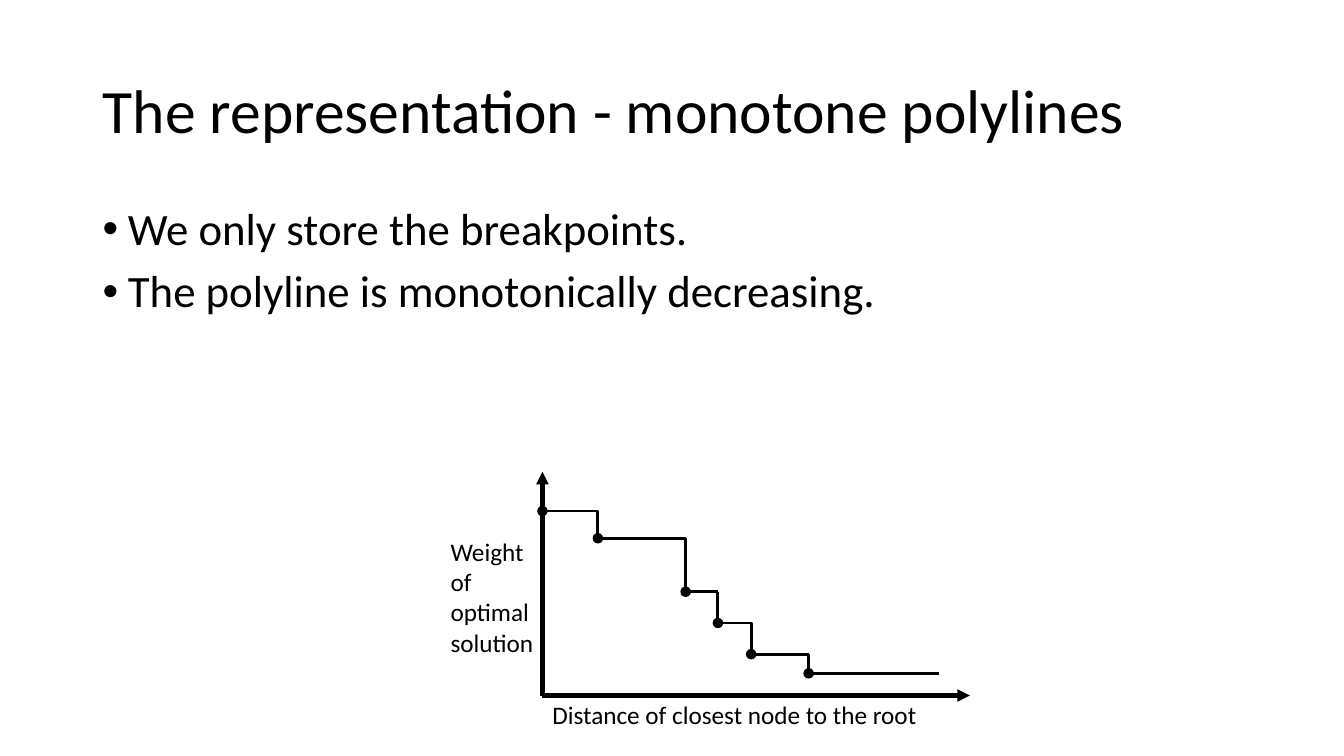
from lxml import etree
from pptx import Presentation
from pptx.dml.color import RGBColor
from pptx.enum.shapes import MSO_CONNECTOR as CONN, MSO_SHAPE as SHAPE
from pptx.enum.text import MSO_ANCHOR as ANCHOR, MSO_AUTO_SIZE as FIT, PP_ALIGN as ALIGN
from pptx.oxml.ns import qn
from pptx.util import Inches, Pt

COLORS = {"ink": "000000"}
FONT = "Calibri"
TITLE = "The representation - monotone polylines"
BULLETS = ["We only store the breakpoints.", "The polyline is monotonically decreasing."]
AXIS_LABELS = [
    ("Weight of optimal solution", (4.37, 5.27, 1.16, 1.31)),
    ("Distance of closest node to the root", (5.38, 6.89, 3.94, 0.4)),
]
ORIGIN = (5.38, 6.9)
AXIS_ENDS = [(5.38, 4.68), (9.62, 6.9)]
BREAKPOINTS = [(5.38, 5.07), (5.93, 5.34), (6.8, 5.87), (7.12, 6.18), (7.45, 6.49), (8.02, 6.68)]
STEPS = [
    ((5.38, 5.07), (6.47, 5.34), False),
    ((6.47, 5.34), (7.12, 5.87), False),
    ((7.12, 5.87), (7.45, 6.49), True),
    ((7.45, 6.49), (8.59, 6.68), False),
]
TAIL = ((8.59, 6.68), (9.31, 6.68))
DOT = 0.09

prs = Presentation()
prs.slide_width, prs.slide_height = Inches(13.33), Inches(7.5)
slide = prs.slides.add_slide(prs.slide_layouts[5])
shapes = slide.shapes


def ink():
    return RGBColor.from_string(COLORS["ink"])


def put_text(sp, lines, size, anchor=ANCHOR.TOP, fit=FIT.NONE, spacing=None, before=0, bullet=None):
    tf = sp.text_frame
    tf.word_wrap, tf.auto_size, tf.vertical_anchor = True, fit, anchor
    for i, line in enumerate(lines):
        p = tf.add_paragraph() if i else tf.paragraphs[0]
        p.alignment, p.line_spacing, p.space_before = ALIGN.LEFT, spacing, Pt(before)
        r = p.add_run()
        r.text = line
        r.font.name, r.font.size = FONT, Pt(size)
        r.font.color.rgb = ink()
        if bullet:
            pPr = p._p.get_or_add_pPr()
            pPr.set("marL", str(Inches(0.25)))
            pPr.set("indent", str(-Inches(0.25)))
            etree.SubElement(pPr, qn("a:buFont")).set("typeface", "Arial")
            etree.SubElement(pPr, qn("a:buChar")).set("char", bullet)


def connect(start, end, width, kind=CONN.STRAIGHT, arrow=False):
    c = shapes.add_connector(kind, *map(Inches, start + end))
    c.line.color.rgb = ink()
    c.line.width = Pt(width)
    if arrow:
        etree.SubElement(c.line._get_or_add_ln(), qn("a:tailEnd")).set("type", "triangle")
    etree.SubElement(c._element.spPr, qn("a:effectLst"))
    return c


def add_step(start, end, vertical_first):
    if not vertical_first:
        connect(start, end, 2, CONN.ELBOW)
        return
    (x1, y1), (x2, y2) = start, end
    cx, cy = (x1 + x2) / 2, (y1 + y2) / 2
    half_w, half_h = (y2 - y1) / 2, (x2 - x1) / 2
    c = connect((cx + half_w, cy - half_h), (cx - half_w, cy + half_h), 2, CONN.ELBOW)
    c._element.spPr.find(qn("a:xfrm")).set("rot", str(270 * 60000))


title = shapes.title
title.left, title.top, title.width, title.height = map(Inches, (0.92, 0.4, 11.5, 1.45))
put_text(title, [TITLE], 44, anchor=ANCHOR.MIDDLE, spacing=0.9)

body = shapes.add_textbox(*map(Inches, (0.92, 2, 11.11, 4.59)))
put_text(body, BULLETS, 32, spacing=0.9, before=10, bullet="•")

for axis_end in AXIS_ENDS:
    connect(ORIGIN, axis_end, 3, arrow=True)
for label, box in AXIS_LABELS:
    put_text(shapes.add_textbox(*map(Inches, box)), [label], 18, fit=FIT.SHAPE_TO_FIT_TEXT)

for step in STEPS:
    add_step(*step)
connect(*TAIL, 2)

for x, y in BREAKPOINTS:
    dot = shapes.add_shape(SHAPE.OVAL, *map(Inches, (x - DOT / 2, y - DOT / 2, DOT, DOT)))
    dot.shadow.inherit = False
    dot.fill.solid()
    dot.fill.fore_color.rgb = ink()
    dot.line.color.rgb = ink()
    dot.line.width = Pt(1)

prs.save("out.pptx")
